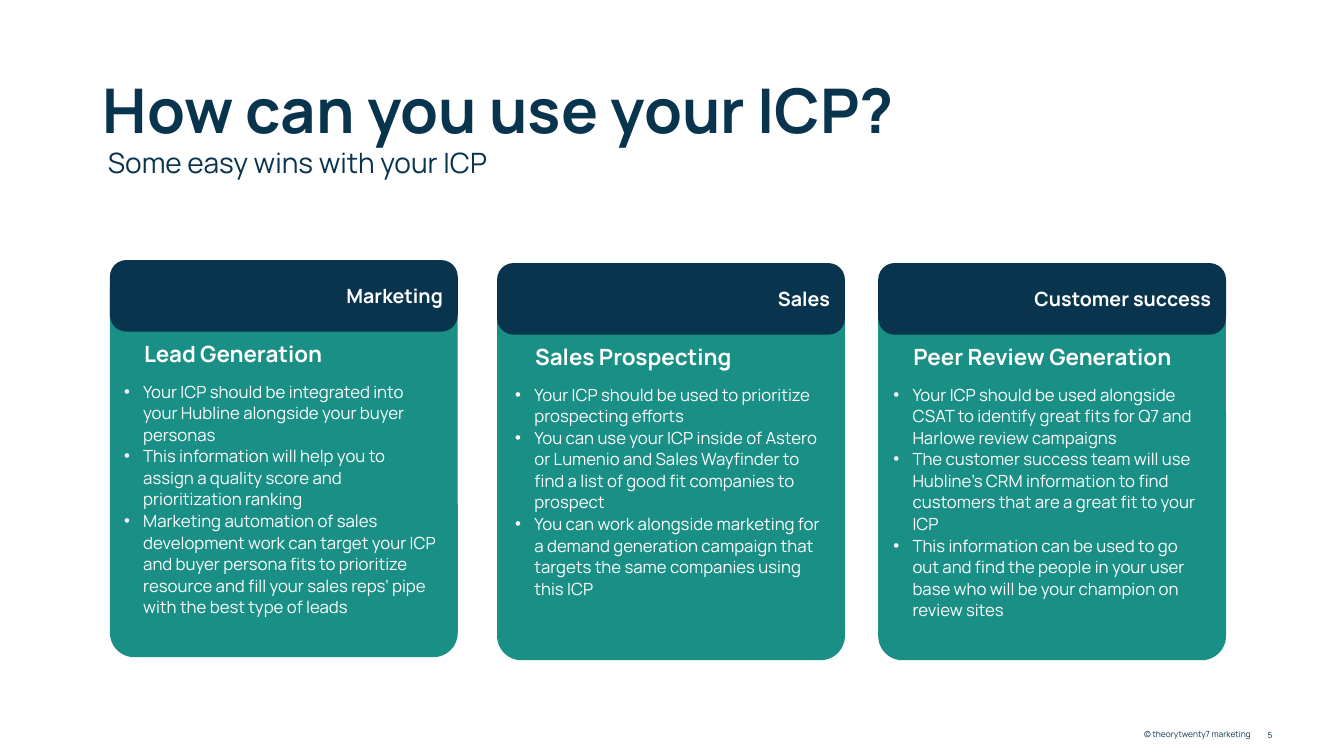
import pptx
import pptx.dml.color
import pptx.enum.shapes
import pptx.enum.text
import pptx.util
from lxml import etree
from pptx.util import Inches

ANCHOR = pptx.enum.text.MSO_ANCHOR
ALIGN = pptx.enum.text.PP_ALIGN
NAVY, TEAL, WHITE = "08344D", "008378", "FFFFFF"

# card left, card top, list left, team, use, actions
CARDS = [
    (1.09, 2.61, 1.14, "Marketing", "Lead Generation", [
        "Your ICP should be integrated into your Hubline alongside your buyer personas",
        "This information will help you to assign a quality score and prioritization ranking",
        "Marketing automation of sales development work can target your ICP and buyer "
        "persona fits to prioritize resource and fill your sales reps’ pipe with the best "
        "type of leads",
    ]),
    (4.93, 2.64, 5.02, "Sales", "Sales Prospecting", [
        "Your ICP should be used to prioritize prospecting efforts",
        "You can use your ICP inside of Astero or Lumenio and Sales Wayfinder to find a "
        "list of good fit companies to prospect",
        "You can work alongside marketing for a demand generation campaign that targets "
        "the same companies using this ICP",
    ]),
    (8.71, 2.64, 8.77, "Customer success", "Peer Review Generation", [
        "Your ICP should be used alongside CSAT to identify great fits for Q7 and Harlowe "
        "review campaigns",
        "The customer success team will use Hubline’s CRM information to find customers "
        "that are a great fit to your ICP",
        "This information can be used to go out and find the people in your user base who "
        "will be your champion on review sites",
    ]),
]


def rgb(value):
    return pptx.dml.color.RGBColor.from_string(value)


def add_pPr_child(paragraph, tag, **attributes):
    pPr = paragraph._p.get_or_add_pPr()
    return etree.SubElement(pPr, pptx.oxml.ns.qn(tag), **attributes)


class SlideBuilder:
    font = "Manrope"

    def __init__(self, slide):
        self.slide = slide
        self.shapes = slide.shapes

    def set_text(self, frame, lines, size, color, bold=False, align=ALIGN.LEFT,
                 anchor=ANCHOR.TOP, spacing=1.0, indent=0, bullet=None):
        frame.word_wrap = True
        frame.auto_size = pptx.enum.text.MSO_AUTO_SIZE.NONE
        frame.vertical_anchor = anchor
        for index, line in enumerate(lines):
            paragraph = frame.paragraphs[0] if index == 0 else frame.add_paragraph()
            pPr = paragraph._p.get_or_add_pPr()
            pPr.set("marL", str(Inches(indent)))
            pPr.set("indent", str(-Inches(indent)))
            if bullet:
                add_pPr_child(paragraph, "a:buFont", typeface="Arial")
                add_pPr_child(paragraph, "a:buChar", char=bullet)
            else:
                add_pPr_child(paragraph, "a:buNone")
            paragraph.alignment = align
            paragraph.line_spacing = spacing
            paragraph.space_before = paragraph.space_after = pptx.util.Pt(0)
            run = paragraph.add_run()
            run.text = line
            run.font.name = self.font
            run.font.size = pptx.util.Pt(size)
            run.font.bold = bold
            run.font.color.rgb = rgb(color)

    def placeholder(self, index, box, lines, size, color, inset=None, **style):
        """Place a layout placeholder on top of what is already drawn."""
        holder = self.slide.placeholders[index]
        holder.left, holder.top, holder.width, holder.height = map(Inches, box)
        holder.element.getparent().append(holder.element)
        frame = holder.text_frame
        if inset is not None:
            frame.margin_left = frame.margin_right = Inches(inset)
            frame.margin_top = frame.margin_bottom = Inches(inset)
        self.set_text(frame, lines, size, color, **style)

    def label(self, box, text, size, color, **style):
        frame = self.shapes.add_textbox(*map(Inches, box)).text_frame
        self.set_text(frame, [text], size, color, **style)

    def panel(self, box, color, rounding, opacity=100):
        panel = self.shapes.add_shape(
            pptx.enum.shapes.MSO_SHAPE.ROUNDED_RECTANGLE, *map(Inches, box))
        panel.adjustments[0] = rounding
        panel.shadow.inherit = False
        panel.line.fill.background()
        panel.fill.solid()
        panel.fill.fore_color.rgb = rgb(color)
        if opacity < 100:
            tint = panel.element.spPr.find(".//" + pptx.oxml.ns.qn("a:srgbClr"))
            etree.SubElement(tint, pptx.oxml.ns.qn("a:alpha"), val=str(opacity * 1000))
        return panel

    def card(self, index, left, top, list_left, team, use, actions):
        self.panel((left, top, 3.45, 3.91), TEAL, 0.07, opacity=90)
        header = self.panel((left, top - 0.03, 3.45, 0.71), NAVY, 0.23)
        self.set_text(header.text_frame, [team], 14, WHITE, bold=True,
                      align=ALIGN.RIGHT, anchor=ANCHOR.MIDDLE)
        self.placeholder(index, (list_left, top + 1.07, 3.29, 1.74), actions, 12, WHITE,
                         inset=0.09, spacing=1.07, indent=0.19, bullet="•")
        self.label((list_left + 0.19, top + 0.72, 3.09, 0.37), use, 16, WHITE, bold=True)


def main():
    deck = pptx.Presentation()
    deck.slide_width, deck.slide_height = Inches(13.33), Inches(7.5)
    comparison_layout = deck.slide_layouts[4]
    page = SlideBuilder(deck.slides.add_slide(comparison_layout))

    page.placeholder(0, (0.92, 0.4, 11.5, 1.45), ["How can you use your ICP?"], 44, NAVY,
                     bold=True, anchor=ANCHOR.MIDDLE, spacing=0.9)
    page.placeholder(1, (0.97, 1.43, 11.65, 0.83), ["Some easy wins with your ICP"],
                     20, NAVY, spacing=0.9)
    for index, card in enumerate(CARDS, start=2):
        page.card(index, *card)
    page.label((9.72, 7.09, 3, 0.4), "5", 6, NAVY, align=ALIGN.RIGHT, anchor=ANCHOR.MIDDLE)
    page.label((11.25, 7.18, 1.34, 0.2), "© theorytwenty7 marketing", 6, NAVY)

    deck.save("out.pptx")


if __name__ == "__main__":
    main()
